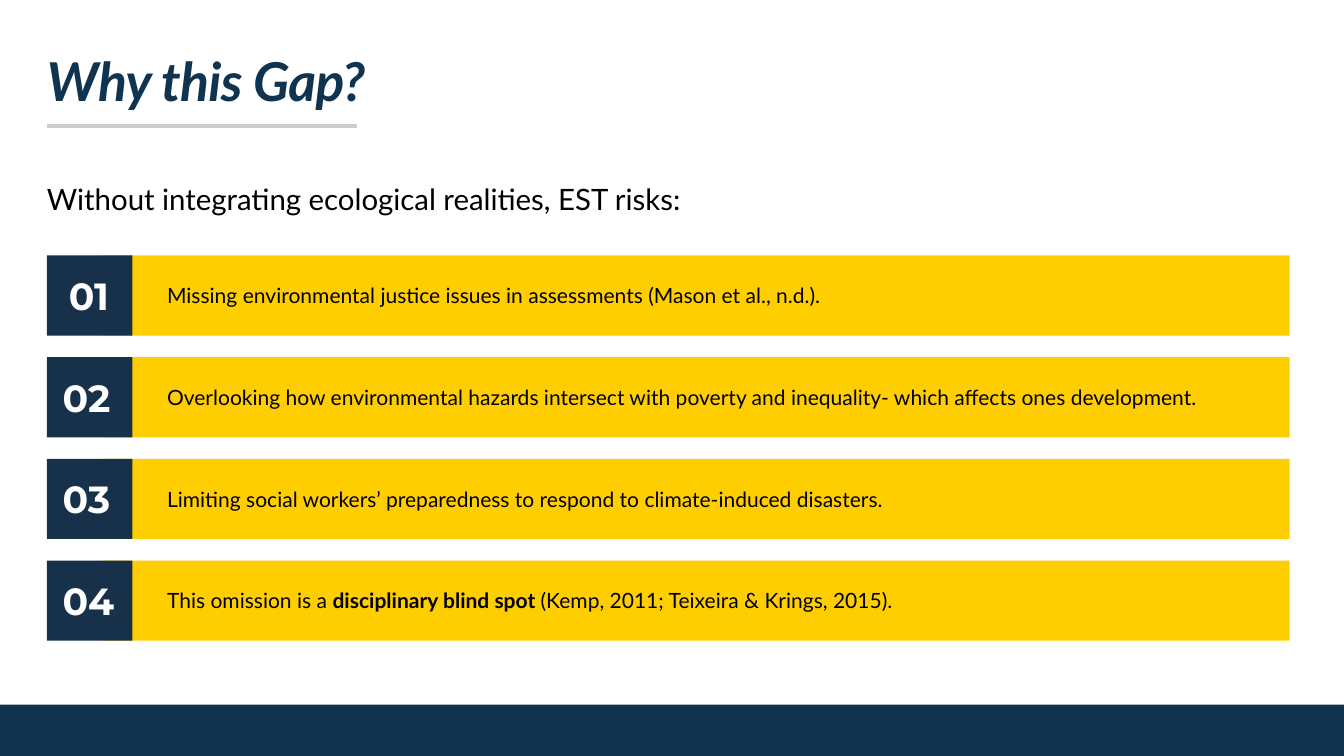
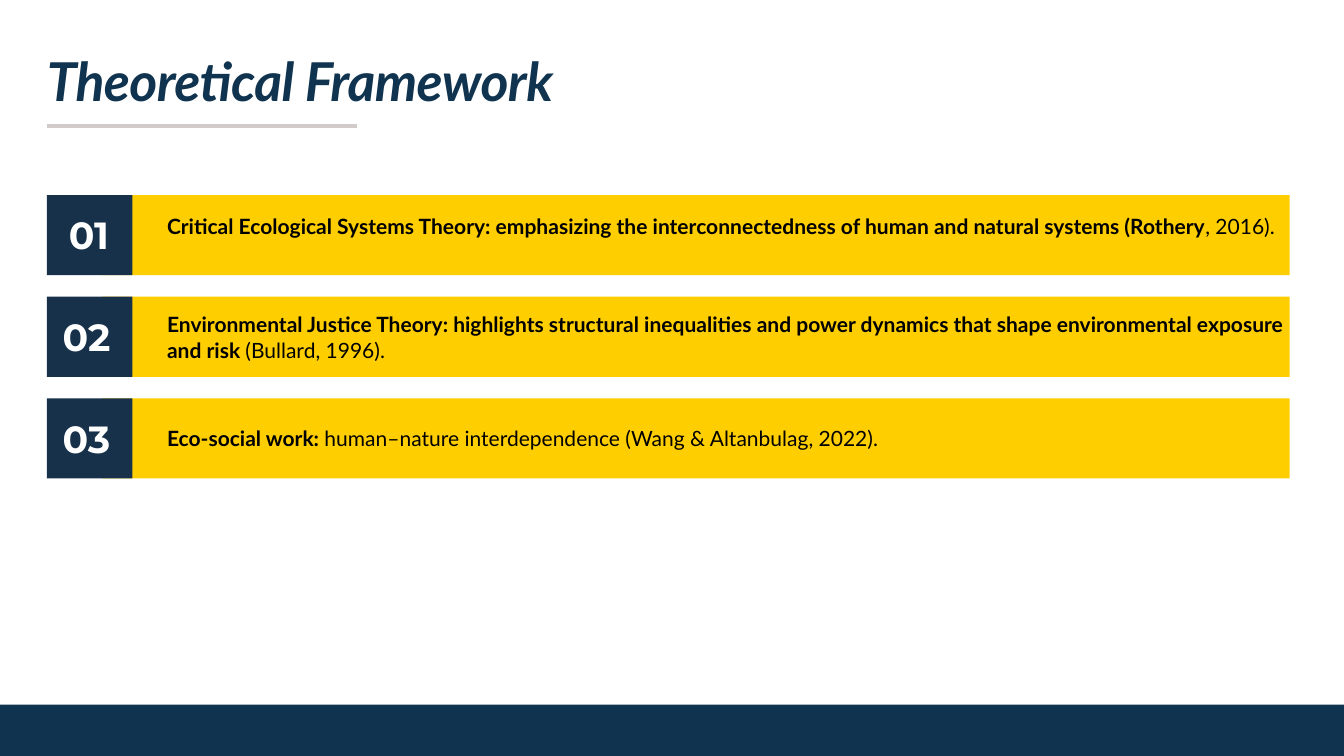
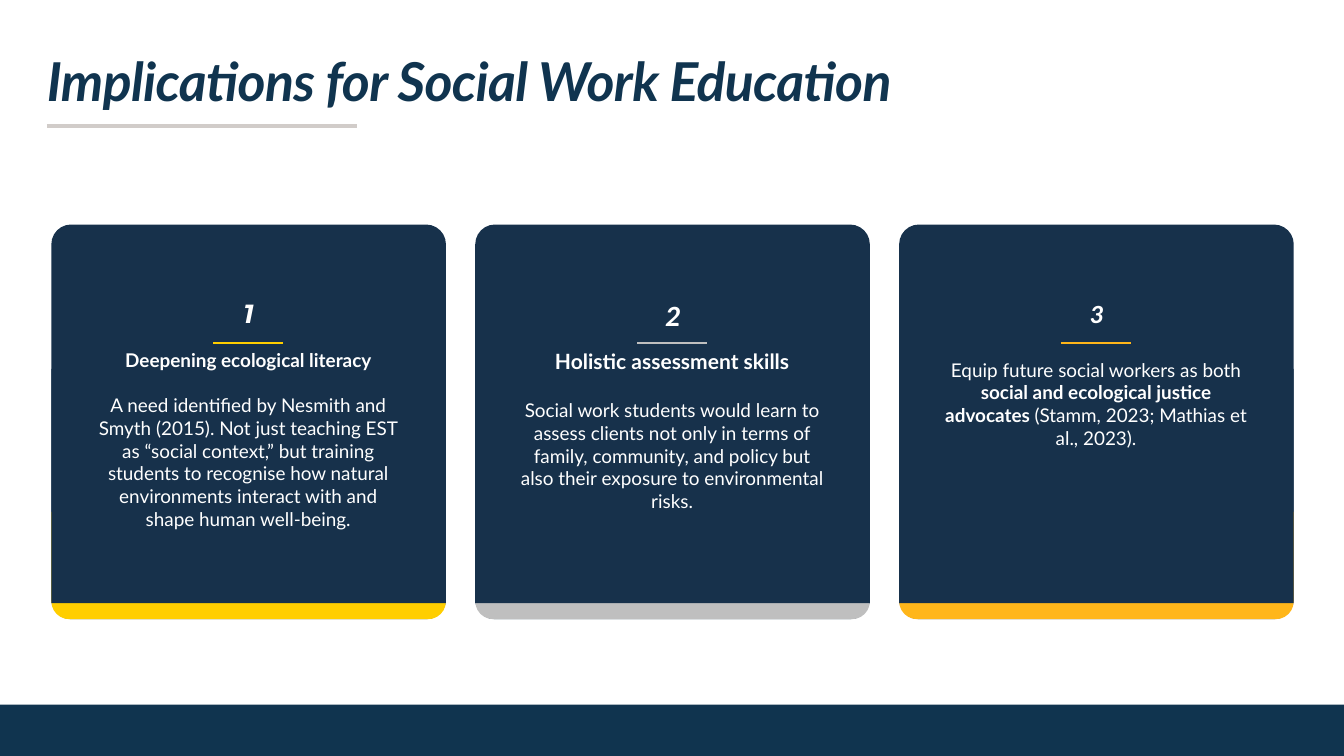
import pptx
import pptx.util
import pptx.dml.color
import pptx.enum.shapes
import pptx.enum.text
import lxml.etree

Inches, Pt = pptx.util.Inches, pptx.util.Pt
RGBColor = pptx.dml.color.RGBColor
SHAPE = pptx.enum.shapes.MSO_SHAPE
ALIGN = pptx.enum.text.PP_ALIGN
A = "http://schemas.openxmlformats.org/drawingml/2006/main"

NAVY = RGBColor(0x10, 0x34, 0x4F)
PANEL = RGBColor(0x17, 0x31, 0x4B)
YELLOW = RGBColor(0xFF, 0xCE, 0x00)
SILVER = RGBColor(0xBF, 0xBF, 0xBF)
AMBER = RGBColor(0xFF, 0xB6, 0x1A)
RULE = RGBColor(0xD1, 0xCC, 0xC9)
WHITE = RGBColor(0xFF, 0xFF, 0xFF)
BLACK = RGBColor(0, 0, 0)

WIDTH, HEIGHT = Inches(17.78), Inches(10)
MARGIN = 3.49
ROW_HEIGHT, ROW_PITCH = 10.6, 13.45
CARD_WIDTH, CARD_HEIGHT, CARD_PITCH = 29.36, 52.2, 31.54


def grid(x, y, w, h):
    """Turn hundredths of the slide's width and height into lengths."""
    return (int(x * WIDTH / 100), int(y * HEIGHT / 100),
            int(w * WIDTH / 100), int(h * HEIGHT / 100))


def add_block(s, kind, box, color):
    sp = s.shapes.add_shape(kind, *grid(*box))
    sp.shadow.inherit = False
    sp.fill.solid()
    sp.fill.fore_color.rgb = color
    sp.line.fill.background()
    return sp


def add_rule(s, x, y, w, color, weight):
    left, top, width, _ = grid(x, y, w, 0)
    line = s.shapes.add_connector(pptx.enum.shapes.MSO_CONNECTOR.STRAIGHT,
                                  left, top, left + width, top)
    line.line.color.rgb = color
    line.line.width = Pt(weight)
    lxml.etree.SubElement(line.element.spPr, f"{{{A}}}effectLst")


def format_frame(tf, inset):
    tf.word_wrap = True
    tf.auto_size = pptx.enum.text.MSO_AUTO_SIZE.SHAPE_TO_FIT_TEXT
    tf.vertical_anchor = pptx.enum.text.MSO_ANCHOR.TOP
    tf.margin_left = tf.margin_right = tf.margin_bottom = 0
    tf.margin_top = Inches(inset)


def write(p, text, size, color, font="Lato", bold=False, italic=False,
          align=ALIGN.LEFT, spacing=0):
    """Fill a paragraph; parts between asterisks are bold."""
    p.alignment = align
    p.font.name, p.font.size = font, Pt(size)
    p.font.color.rgb = color
    p.font.bold, p.font.italic = bold, italic
    for i, part in enumerate(text.split("*")):
        if part:
            r = p.add_run()
            r.text = part
            if i % 2:
                r.font.bold = True
            if spacing:
                r._r.get_or_add_rPr().set("spc", str(spacing))


def add_text(s, box, text, size, color, inset=0.01, **style):
    tf = s.shapes.add_textbox(*grid(*box)).text_frame
    format_frame(tf, inset)
    write(tf.paragraphs[0], text, size, color, **style)
    return tf


def add_footer_band(prs, s):
    band = add_block(s, SHAPE.RECTANGLE, (0, 93.2, 100, 6.8), NAVY)
    prs.slide_master.shapes.element.append(band.element)


def add_titled_slide(prs, title):
    s = prs.slides.add_slide(prs.slide_layouts.get_by_name("Title Only"))
    sp = s.shapes.title
    sp.left, sp.top, sp.width, sp.height = grid(MARGIN, 6.2, 92.41, 8.8)
    format_frame(sp.text_frame, 0.01)
    write(sp.text_frame.paragraphs[0], title, 51, NAVY,
          bold=True, italic=True, spacing=-60)
    add_rule(s, MARGIN, 16.7, 23.06, RULE, 4)
    return s


def add_numbered_row(s, x, y, label, text, text_top):
    add_block(s, SHAPE.RECTANGLE, (x + 4.11, y, 88.36, ROW_HEIGHT), YELLOW)
    add_block(s, SHAPE.RECTANGLE, (x, y, 6.36, ROW_HEIGHT), PANEL)
    indent, width = (1.63, 3.21) if label == "01" else (1.18, 4.11)
    add_text(s, (x + indent, y + 2.15, width, 6.2), label, 36, WHITE,
             font="Montserrat", bold=True, spacing=-20)
    text_height = 4.1 if text_top > 2 else 7.4
    add_text(s, (x + 8.94, y + text_top, 83.24, text_height), text, 20, BLACK,
             inset=0.07)


def add_rows(s, y, rows):
    for i, (text, text_top) in enumerate(rows):
        add_numbered_row(s, MARGIN, y + i * ROW_PITCH, f"{i + 1:02}",
                         text, text_top)


def add_card(s, x, y, number, number_size, number_font, accent,
             heading, heading_size, body):
    panel = add_block(s, SHAPE.ROUNDED_RECTANGLE,
                      (x, y, CARD_WIDTH, CARD_HEIGHT), PANEL)
    panel.adjustments[0] = 0.05
    add_text(s, (x + 4.72, y + 9.5, 19.91, 4.3), number, number_size, WHITE,
             font=number_font, bold=True, italic=True, align=ALIGN.CENTER)
    add_rule(s, x + 12.04, y + 15.7, 5.23, accent, 1.5)
    strip = add_block(s, SHAPE.ROUND_2_SAME_RECTANGLE,
                      (x, y + 38, CARD_WIDTH, 14.2), accent)
    strip.rotation = 180
    add_block(s, SHAPE.RECTANGLE, (x, y + 19.1, CARD_WIDTH, 31), PANEL)
    if heading:
        tf = add_text(s, (x + 3.32, y + 16.3, 22.67, 27.4), heading,
                      heading_size, WHITE, bold=True, align=ALIGN.CENTER)
        tf.paragraphs[0].space_after = Pt(heading_size * 1.2)
        write(tf.add_paragraph(), body, 18, WHITE, align=ALIGN.CENTER)
    else:
        add_text(s, (x + 3.32, y + 17.6, 22.67, 12.3), body, 18, WHITE,
                 align=ALIGN.CENTER)


def build_gap_slide(prs):
    s = add_titled_slide(prs, "Why this Gap?")
    add_text(s, (MARGIN, 23.9, 92.18, 4.9),
             "Without integrating ecological realities, EST risks:", 28, BLACK)
    add_rows(s, 33.8, [
        ("Missing environmental justice issues in assessments "
         "(Mason et al., n.d.).", 2.9),
        ("Overlooking how environmental hazards intersect with poverty and "
         "inequality- which affects ones development.", 2.9),
        ("Limiting social workers’ preparedness to respond to "
         "climate-induced disasters.", 2.9),
        ("This omission is a *disciplinary blind spot *"
         "(Kemp, 2011; Teixeira & Krings, 2015).", 2.9),
    ])
    return s


def build_framework_slide(prs):
    s = add_titled_slide(prs, "Theoretical Framework")
    add_rows(s, 25.8, [
        ("*Critical Ecological Systems Theory: emphasizing the "
         "interconnectedness of human and natural systems (Rothery*, 2016).",
         1.7),
        ("*Environmental Justice Theory: highlights structural inequalities "
         "and power dynamics that shape environmental exposure and risk *"
         "(Bullard, 1996).", 1.3),
        ("*Eco-social work: *human–nature interdependence "
         "(Wang & Altanbulag, 2022).", 2.9),
    ])


def build_implications_slide(prs):
    s = add_titled_slide(prs, "Implications for Social Work Education")
    cards = [
        ("1", 25, "Montserrat", YELLOW, "Deepening ecological literacy", 18,
         "A need identified by Nesmith and Smyth (2015). Not just teaching "
         "EST as “social context,” but training students to recognise how "
         "natural environments interact with and shape human well-being."),
        ("2", 28, "Calibri", SILVER, "Holistic assessment skills", 20,
         "Social work students would learn to assess clients not only in "
         "terms of family, community, and policy but also their exposure to "
         "environmental risks."),
        ("3", 25, "Calibri", AMBER, None, None,
         "Equip future social workers as both *social and ecological justice "
         "advocates *(Stamm, 2023; Mathias et al., 2023)."),
    ]
    for i, card in enumerate(cards):
        add_card(s, 3.82 + i * CARD_PITCH, 29.7, *card)


def main():
    prs = pptx.Presentation()
    prs.slide_width, prs.slide_height = WIDTH, HEIGHT
    add_footer_band(prs, build_gap_slide(prs))
    build_framework_slide(prs)
    build_implications_slide(prs)
    prs.save("out.pptx")


if __name__ == "__main__":
    main()
